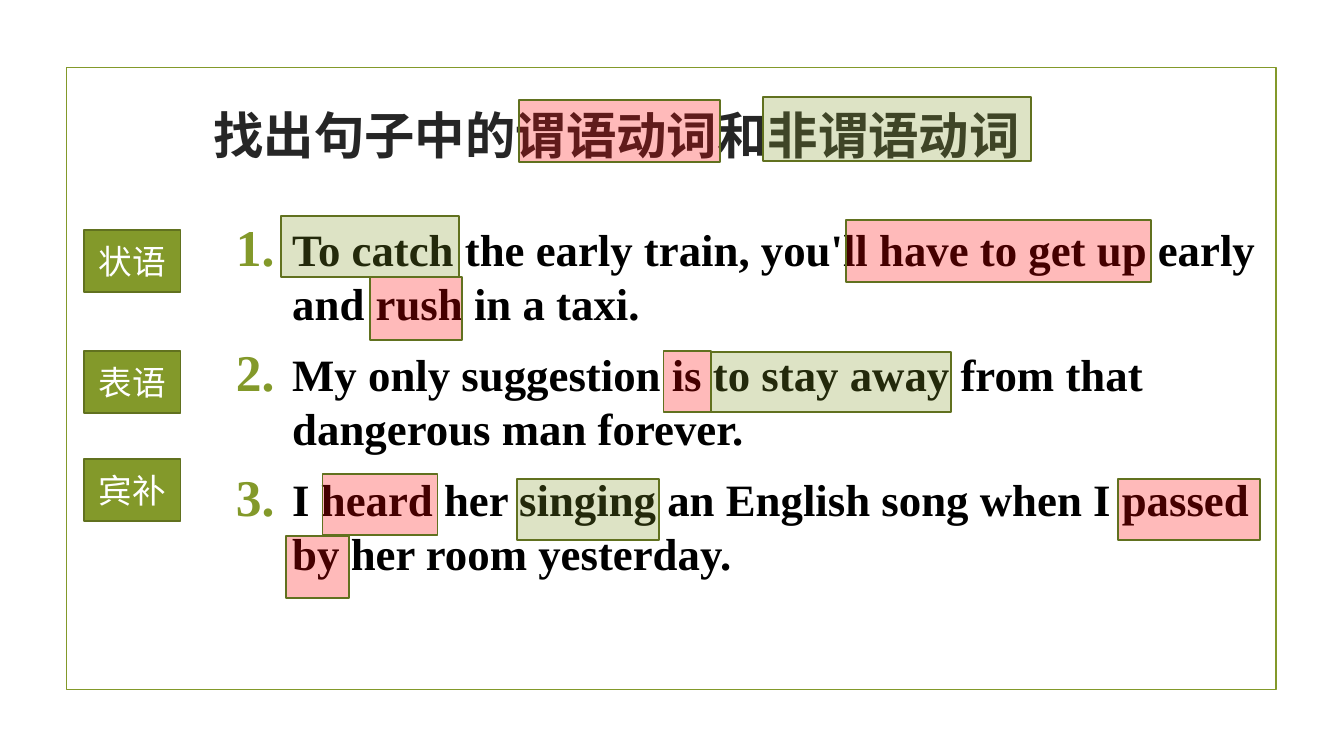
from lxml import etree
from pptx import Presentation
from pptx.dml.color import RGBColor
from pptx.enum.shapes import MSO_SHAPE
from pptx.enum.text import MSO_ANCHOR, PP_ALIGN
from pptx.oxml.ns import qn
from pptx.util import Pt

PX = 9144
RECT = MSO_SHAPE.RECTANGLE
MIDDLE, TOP = MSO_ANCHOR.MIDDLE, MSO_ANCHOR.TOP
CENTER, LEFT = PP_ALIGN.CENTER, PP_ALIGN.LEFT
GREEN = RGBColor(0x83, 0x99, 0x2A)
OLIVE = RGBColor(0x61, 0x71, 0x1F)
RED = RGBColor(0xFF, 0x00, 0x00)
DARK = RGBColor(0x26, 0x26, 0x26)
BLACK = RGBColor(0x00, 0x00, 0x00)
WHITE = RGBColor(0xFF, 0xFF, 0xFF)
SANS = "Noto Sans CJK SC"
SERIF = "Times New Roman"

HEADING = "找出句子中的谓语动词和非谓语动词"
HEAD_MARKS = [
    (390, 73, 199, 62, RED),
    (632, 70, 266, 64, GREEN),
]
ITEMS = [
    "To catch the early train, you'll have to get up early and rush in a taxi.",
    "My only suggestion is to stay away from that dangerous man forever.",
    "I heard her singing an English song when I passed by her room yesterday.",
]
ITEM_MARKS = [
    (55, -1, 176, 61, GREEN),
    (615, 3, 303, 62, RED),
    (143, 60, 91, 62, RED),
    (434, 133, 47, 61, RED),
    (481, 134, 238, 60, GREEN),
    (96, 255, 114, 61, RED),
    (289, 260, 141, 61, GREEN),
    (885, 260, 141, 61, RED),
    (60, 317, 62, 61, RED),
]
LABELS = [("状语", 0), ("表语", 120), ("宾补", 227)]


def scale(box):
    return [n * PX for n in box]


def add_rect(slide, box, fill=None, line=OLIVE, alpha=None):
    shape = slide.shapes.add_shape(RECT, *scale(box))
    shape.shadow.inherit = False
    shape.line.color.rgb = line
    shape.line.width = Pt(1.25)
    if fill is None:
        shape.fill.background()
        return shape
    shape.fill.solid()
    shape.fill.fore_color.rgb = fill
    if alpha:
        color = shape.fill._xPr.find(qn("a:solidFill"))[0]
        etree.SubElement(color, qn("a:alpha")).set("val", str(alpha * 1000))
    return shape


def add_number(para):
    props = para._p.get_or_add_pPr()
    props.set("marL", str(56 * PX))
    props.set("indent", str(-56 * PX))
    color = etree.SubElement(props, qn("a:buClr"))
    etree.SubElement(color, qn("a:srgbClr")).set("val", str(GREEN))
    etree.SubElement(props, qn("a:buSzPct")).set("val", "115000")
    etree.SubElement(props, qn("a:buFont")).set("typeface", SERIF)
    etree.SubElement(props, qn("a:buAutoNum")).set("type", "arabicPeriod")


def write(shape, *texts, size, color, font=SERIF, bold=False,
          align=LEFT, anchor=TOP, ratio=None, before=0, after=0, number=False):
    frame = shape.text_frame
    frame.word_wrap = True
    frame.vertical_anchor = anchor
    for i, text in enumerate(texts):
        para = frame.add_paragraph() if i else frame.paragraphs[0]
        para.alignment = align
        if ratio:
            para.line_spacing = ratio
        para.space_before = Pt(before if i else 0)
        para.space_after = Pt(after)
        if number:
            add_number(para)
        run = para.add_run()
        run.text = text
        run.font.size = Pt(size)
        run.font.bold = bold
        run.font.name = font
        run.font.color.rgb = color
        east = etree.SubElement(run._r.get_or_add_rPr(), qn("a:ea"))
        east.set("typeface", SANS)


def add_marks(slide, box, marks):
    for left, top, width, height, color in marks:
        spot = (box[0] + left, box[1] + top, width, height)
        add_rect(slide, spot, color, alpha=27)


def add_head(slide, box):
    shape = slide.shapes.add_textbox(*scale(box))
    write(shape, HEADING, size=36, color=DARK, font=SANS, bold=True,
          align=CENTER, anchor=MIDDLE, ratio=1.5)
    add_marks(slide, box, HEAD_MARKS)


def add_list(slide, box):
    shape = slide.shapes.add_textbox(*scale(box))
    write(shape, *ITEMS, size=32, color=BLACK, bold=True,
          before=6.4, after=6, number=True)
    add_marks(slide, box, ITEM_MARKS)


def add_labels(slide, box):
    left, top, width, _ = box
    for text, drop in LABELS:
        shape = add_rect(slide, (left, top + drop, width, 62), GREEN)
        write(shape, text, size=24, color=WHITE, align=CENTER, anchor=MIDDLE)


def main():
    deck = Presentation()
    deck.slide_width, deck.slide_height = scale((1333, 750))
    slide = deck.slides.add_slide(deck.slide_layouts[6])
    add_rect(slide, (66, 67, 1200, 617), line=GREEN)
    add_head(slide, (125, 26, 973, 184))
    add_list(slide, (224, 215, 1041, 399))
    add_labels(slide, (83, 228, 96, 289))
    deck.save("out.pptx")


if __name__ == "__main__":
    main()
